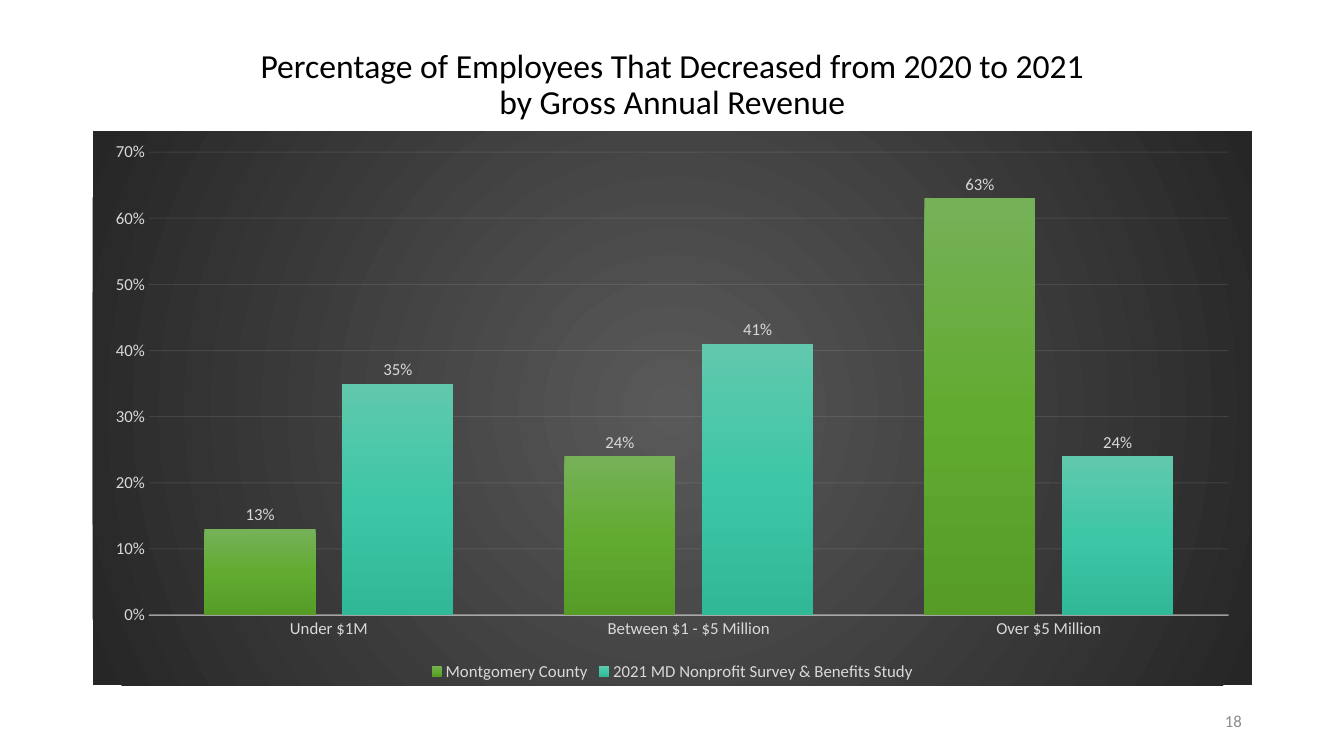
import pptx
import pptx.chart.data
import pptx.dml.color
import pptx.enum.chart
import pptx.enum.text
import pptx.oxml
import pptx.oxml.ns
import pptx.util

Pt = pptx.util.Pt
RGBColor = pptx.dml.color.RGBColor
qn = pptx.oxml.ns.qn
Align = pptx.enum.text.PP_ALIGN

BLACK = RGBColor(0x00, 0x00, 0x00)
NUMBER_GRAY = RGBColor(0x8C, 0x8C, 0x8C)
LABEL_GRAY = RGBColor(0xD9, 0xD9, 0xD9)
LINE_GRAY = RGBColor(0xF2, 0xF2, 0xF2)
BACKDROP = [RGBColor(0x59, 0x59, 0x59), RGBColor(0x26, 0x26, 0x26)]
GREENS = [RGBColor(0x76, 0xB1, 0x58), RGBColor(0x62, 0xAB, 0x31), RGBColor(0x56, 0x9C, 0x27)]
TEALS = [RGBColor(0x61, 0xC8, 0xAD), RGBColor(0x3E, 0xC7, 0xA6), RGBColor(0x30, 0xB8, 0x97)]

LINEAR = '<a:lin ang="5400000" scaled="0"/>'
RADIAL = '<a:path path="circle"><a:fillToRect l="50000" t="50000" r="50000" b="50000"/></a:path>'


def gradient(colors, direction):
    """Return shape properties with evenly spaced gradient stops."""
    step = 100000 // (len(colors) - 1)
    stops = "".join(
        f'<a:gs pos="{i * step}"><a:srgbClr val="{color}"/></a:gs>'
        for i, color in enumerate(colors))
    return pptx.oxml.parse_xml(
        f'<c:spPr {pptx.oxml.ns.nsdecls("c", "a")}><a:gradFill rotWithShape="1">'
        f"<a:gsLst>{stops}</a:gsLst>{direction}</a:gradFill><a:ln><a:noFill/></a:ln></c:spPr>")


def style_line(line, width, opacity):
    line.width = Pt(width)
    line.color.rgb = LINE_GRAY
    color = next(line._get_or_add_ln().iter(qn("a:srgbClr")))
    color.append(pptx.oxml.parse_xml(
        f'<a:alpha {pptx.oxml.ns.nsdecls("a")} val="{opacity * 1000}"/>'))


class RevenueSlide:
    font_name = "Calibri"
    label_size = 12

    def __init__(self, presentation):
        self.slide = presentation.slides.add_slide(presentation.slide_layouts[6])

    def style_font(self, font, size, color):
        font.name = self.font_name
        font.size = Pt(size)
        font.bold = False
        font.color.rgb = color

    def text(self, words, *, box, size, color, align, spacing=1.0):
        frame = self.slide.shapes.add_textbox(*map(Pt, box)).text_frame
        frame.word_wrap = True
        frame.vertical_anchor = pptx.enum.text.MSO_ANCHOR.MIDDLE
        paragraph = frame.paragraphs[0]
        paragraph.text = words
        paragraph.alignment = align
        paragraph.line_spacing = spacing
        for run in paragraph.runs:
            self.style_font(run.font, size, color)

    def column_chart(self, categories, groups, *, box):
        data = pptx.chart.data.CategoryChartData(number_format="0%")
        data.categories = categories
        for name, values, _ in groups:
            data.add_series(name, values)
        chart = self.slide.shapes.add_chart(
            pptx.enum.chart.XL_CHART_TYPE.COLUMN_CLUSTERED, *map(Pt, box), data).chart
        chart.has_title = False
        self.style_font(chart.font, self.label_size, LABEL_GRAY)
        chart.element.find(qn("c:chart")).addnext(gradient(BACKDROP, RADIAL))

        # Columns and their labels
        plot = chart.plots[0]
        plot.gap_width = 100
        plot.overlap = -24
        plot.vary_by_categories = False
        for series, (_, _, colors) in zip(plot.series, groups):
            series.format.fill.solid()
            properties = series._element.find(qn("c:spPr"))
            series._element.replace(properties, gradient(colors, LINEAR))
            labels = series.data_labels
            labels.show_value = True
            labels.number_format = "0%"
            labels.number_format_is_linked = False
            labels.position = pptx.enum.chart.XL_LABEL_POSITION.OUTSIDE_END
            self.style_font(labels.font, self.label_size, LABEL_GRAY)

        # Axes and gridlines
        for axis in (chart.category_axis, chart.value_axis):
            axis.major_tick_mark = axis.minor_tick_mark = pptx.enum.chart.XL_TICK_MARK.NONE
            self.style_font(axis.tick_labels.font, self.label_size, LABEL_GRAY)
        style_line(chart.category_axis.format.line, 1, 54)
        percent_axis = chart.value_axis
        percent_axis.minimum_scale, percent_axis.maximum_scale = 0, 0.7
        percent_axis.major_unit = 0.1
        percent_axis.tick_labels.number_format = "0%"
        percent_axis.tick_labels.number_format_is_linked = False
        percent_axis.format.line.fill.background()
        style_line(percent_axis.major_gridlines.format.line, 0.75, 10)

        # Legend
        chart.has_legend = True
        chart.legend.position = pptx.enum.chart.XL_LEGEND_POSITION.BOTTOM
        chart.legend.include_in_layout = False
        self.style_font(chart.legend.font, self.label_size, LABEL_GRAY)


def main():
    presentation = pptx.Presentation()
    presentation.slide_width = Pt(960)
    presentation.slide_height = Pt(540)
    page = RevenueSlide(presentation)

    # Title
    page.text("Percentage of Employees That Decreased from 2020 to 2021\vby Gross Annual Revenue",
              box=(66.24, 28.8, 828, 64.8), size=24, color=BLACK,
              align=Align.CENTER, spacing=0.9)

    # Share of employees by revenue
    page.column_chart(
        ["Under $1M", "Between $1 - $5 Million", "Over $5 Million"],
        [("Montgomery County", (0.13, 0.24, 0.63), GREENS),
         ("2021 MD Nonprofit Survey & Benefits Study", (0.35, 0.41, 0.24), TEALS)],
        box=(66.24, 93.6, 828, 396))

    # Page number
    page.text("18", box=(678.24, 500.4, 216, 28.8), size=12, color=NUMBER_GRAY,
              align=Align.RIGHT)

    presentation.save("out.pptx")


if __name__ == "__main__":
    main()
